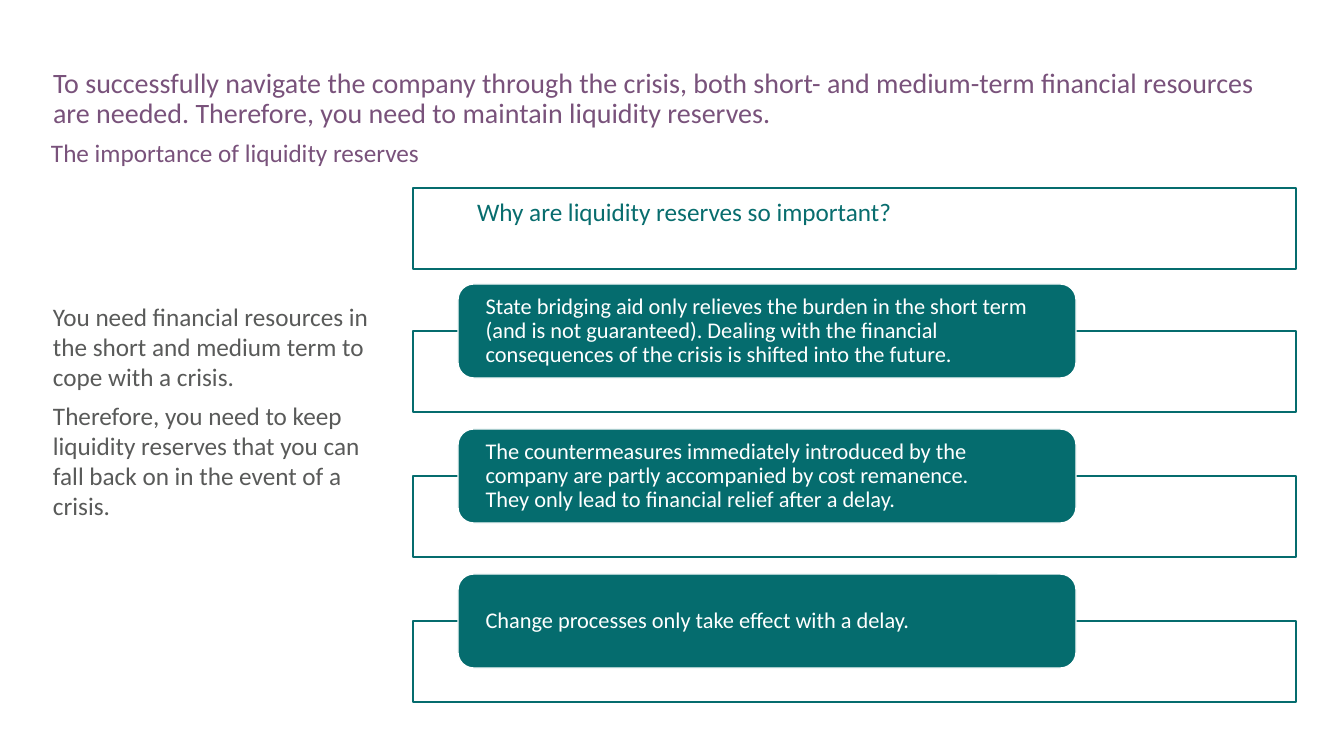
from pptx import Presentation
from pptx.dml.color import RGBColor
from pptx.enum.shapes import MSO_SHAPE
from pptx.enum.text import MSO_ANCHOR, PP_ALIGN
from pptx.util import Emu, Pt

HEADLINE = (
    "To successfully navigate the company through the crisis, both short- and medium-term "
    "financial resources are needed. Therefore, you need to maintain liquidity reserves."
)
SUBTITLE = "The importance of liquidity reserves"
QUESTION = "Why are liquidity reserves so important?"
SUMMARY = [
    "You need financial resources in the short and medium term to cope with a crisis.",
    "Therefore, you need to keep liquidity reserves that you can fall back on in the event of a crisis.",
]
REASONS = [
    [
        "State bridging aid only relieves the burden in the short term (and is not guaranteed). "
        "Dealing with the financial consequences of the crisis is shifted into the future."
    ],
    [
        "The countermeasures immediately introduced by the company are partly accompanied by cost remanence.",
        "They only lead to financial relief after a delay.",
    ],
    ["Change processes only take effect with a delay."],
]

FONT = "Calibri"
TEAL = RGBColor(0x05, 0x6C, 0x6E)
QUESTION_TEAL = RGBColor(0x08, 0x6D, 0x6E)
PURPLE = RGBColor(0x79, 0x52, 0x7B)
GREY = RGBColor(0x59, 0x5A, 0x59)
WHITE = RGBColor(0xFF, 0xFF, 0xFF)

FRAME_LEFT, FRAME_WIDTH, FRAME_HEIGHT = 413, 883, 81
QUESTION_TOP = 188
FIRST_FRAME_TOP, FRAME_PITCH = 331, 145
CARD_LEFT, CARD_WIDTH, CARD_HEIGHT = 458, 618, 94
CARD_RISE = 47


def px(length):
    return Emu(round(length * 914400 / 100.8))


def write(shape, paragraphs, size, color, anchor=MSO_ANCHOR.TOP, margins=(10, 5), line=1.0, before=0):
    frame = shape.text_frame
    frame.word_wrap = True
    frame.vertical_anchor = anchor
    frame.margin_left = frame.margin_right = px(margins[0])
    frame.margin_top = frame.margin_bottom = px(margins[1])
    for index, text in enumerate(paragraphs):
        paragraph = frame.add_paragraph() if index else frame.paragraphs[0]
        paragraph.alignment = PP_ALIGN.LEFT
        paragraph.line_spacing = line
        if index:
            paragraph.space_before = Pt(before)
        run = paragraph.add_run()
        run.text = text
        run.font.name = FONT
        run.font.size = Pt(size)
        run.font.color.rgb = color


def add_text(slide, box, paragraphs, **text_format):
    shape = slide.shapes.add_textbox(*map(px, box))
    write(shape, paragraphs, **text_format)


def add_box(slide, kind, box, fill, line):
    shape = slide.shapes.add_shape(kind, *map(px, box))
    shape.shadow.inherit = False
    shape.fill.solid()
    shape.fill.fore_color.rgb = fill
    shape.line.color.rgb = line
    shape.line.width = Pt(1)
    return shape


def add_frame(slide, top):
    add_box(slide, MSO_SHAPE.RECTANGLE, (FRAME_LEFT, top, FRAME_WIDTH, FRAME_HEIGHT), WHITE, TEAL)


def main():
    presentation = Presentation()
    presentation.slide_width, presentation.slide_height = px(1344), px(756)
    slide = presentation.slides.add_slide(presentation.slide_layouts[6])

    for index, reason in enumerate(REASONS):
        top = FIRST_FRAME_TOP + index * FRAME_PITCH
        add_frame(slide, top)
        card_box = (CARD_LEFT, top - CARD_RISE, CARD_WIDTH, CARD_HEIGHT)
        card = add_box(slide, MSO_SHAPE.ROUNDED_RECTANGLE, card_box, TEAL, WHITE)
        write(card, reason, size=16, color=WHITE, anchor=MSO_ANCHOR.MIDDLE, margins=(23, 0), line=0.9)

    add_text(slide, (43, 185, 352, 452), SUMMARY, size=18, color=GREY, anchor=MSO_ANCHOR.MIDDLE, before=6)
    add_text(slide, (43, 64, 1264, 65), [HEADLINE], size=20, color=PURPLE, line=0.9)
    add_text(slide, (41, 136, 1266, 28), [SUBTITLE], size=18, color=PURPLE, line=0.9)
    add_frame(slide, QUESTION_TOP)
    add_text(slide, (467, 191, 608, 40), [QUESTION], size=18, color=QUESTION_TEAL)

    presentation.save("out.pptx")


if __name__ == "__main__":
    main()
